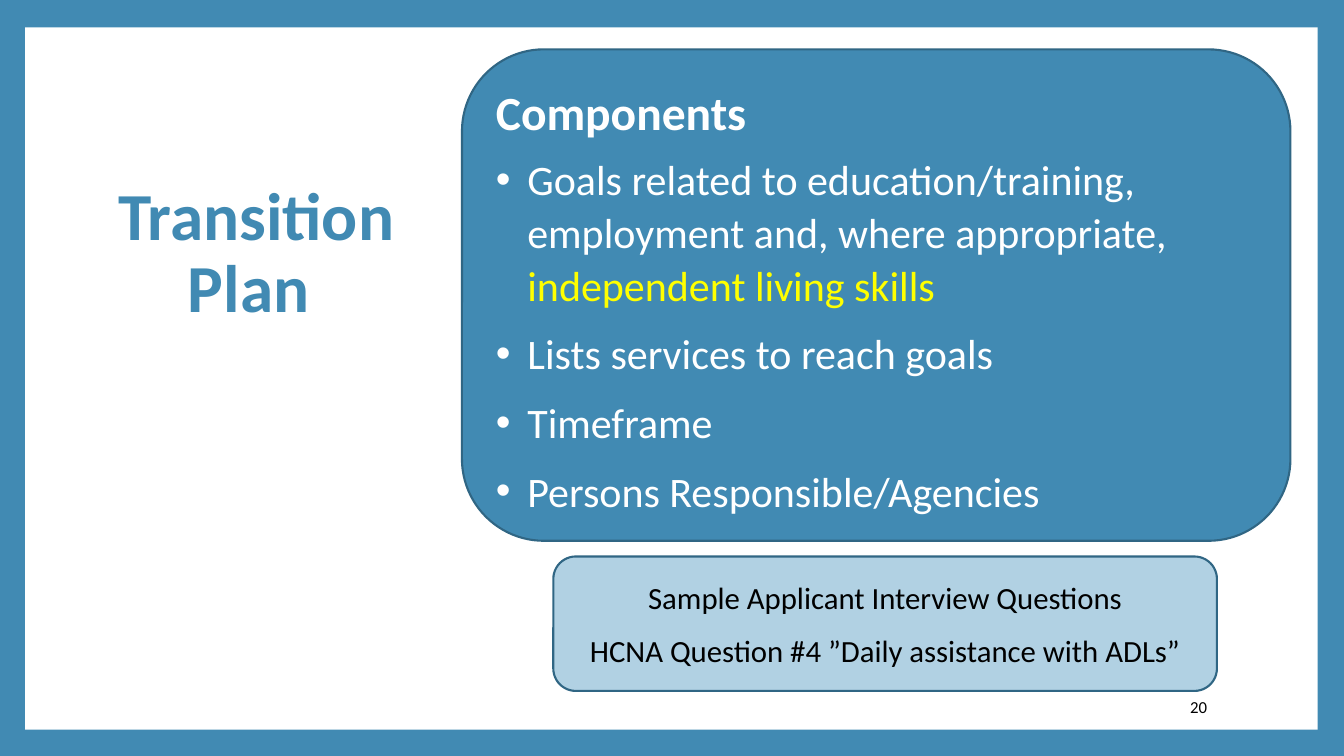
from pptx import Presentation
from pptx.dml.color import RGBColor
from pptx.enum.shapes import MSO_SHAPE
from pptx.enum.text import MSO_ANCHOR, PP_ALIGN
from pptx.oxml.ns import qn
from pptx.util import Pt
from lxml import etree

RECTANGLE = MSO_SHAPE.RECTANGLE
ROUNDED = MSO_SHAPE.ROUNDED_RECTANGLE
MIDDLE = MSO_ANCHOR.MIDDLE
LEFT, CENTER, RIGHT = PP_ALIGN.LEFT, PP_ALIGN.CENTER, PP_ALIGN.RIGHT

EMU_PER_PX = 9525
SLIDE_SIZE = (1280, 720)
FONT = "Calibri"
BLUE, DARK_BLUE, PALE_BLUE = "418AB3", "306684", "B1D1E3"
WHITE, BLACK, YELLOW = "FFFFFF", "000000", "FFFF00"
BULLET_INDENT = 30

COMPONENTS = [
    (1.05, [
        ("Goals related to education/training, employment and, where appropriate, ", WHITE),
        ("independent living skills", YELLOW),
    ]),
    (1.14, [("Lists services to reach goals", WHITE)]),
    (1.14, [("Timeframe", WHITE)]),
    (1.14, [("Persons Responsible/Agencies", WHITE)]),
]
QUESTIONS = [
    "Sample Applicant Interview Questions",
    "HCNA Question #4 ”Daily assistance with ADLs”",
]


def px(length):
    return length * EMU_PER_PX


def color(value):
    return RGBColor.from_string(value)


def add_box(slide, box, kind, fill, line=None):
    shape = slide.shapes.add_shape(kind, *map(px, box))
    shape.shadow.inherit = False
    shape.fill.solid()
    shape.fill.fore_color.rgb = color(fill)
    if line:
        shape.line.color.rgb = color(line)
        shape.line.width = Pt(1.5)
    else:
        shape.line.fill.background()
    return shape


def middle_frame(shape):
    frame = shape.text_frame
    frame.word_wrap = True
    frame.vertical_anchor = MIDDLE
    return frame


def next_paragraph(frame, alignment):
    first = frame.paragraphs[0]
    paragraph = frame.add_paragraph() if first.runs else first
    paragraph.alignment = alignment
    return paragraph


def add_run(paragraph, text, size, font_color, bold=False):
    run = paragraph.add_run()
    run.text = text
    run.font.name = FONT
    run.font.size = Pt(size)
    run.font.bold = bold
    run.font.color.rgb = color(font_color)


def add_bullet(paragraph):
    properties = paragraph._p.get_or_add_pPr()
    properties.set("marL", str(px(BULLET_INDENT)))
    properties.set("indent", str(-px(BULLET_INDENT)))
    etree.SubElement(properties, qn("a:buFont"), typeface="Arial")
    etree.SubElement(properties, qn("a:buChar"), char="•")


def add_frame(slide, box):
    slide.background.fill.solid()
    slide.background.fill.fore_color.rgb = color(BLUE)
    add_box(slide, box, RECTANGLE, WHITE)


def add_title(slide, box):
    frame = middle_frame(slide.shapes.add_textbox(*map(px, box)))
    paragraph = next_paragraph(frame, CENTER)
    paragraph.line_spacing = 0.9
    add_run(paragraph, "Transition Plan ", 48, BLUE, bold=True)


def add_page_number(slide, box):
    frame = middle_frame(slide.shapes.add_textbox(*map(px, box)))
    add_run(next_paragraph(frame, RIGHT), "20", 12, BLACK)


def add_components(slide, box):
    frame = middle_frame(add_box(slide, box, ROUNDED, BLUE, DARK_BLUE))
    heading = next_paragraph(frame, LEFT)
    heading.line_spacing = 1.14
    heading.space_after = Pt(8)
    add_run(heading, "Components", 34, WHITE, bold=True)
    for line_spacing, runs in COMPONENTS:
        paragraph = next_paragraph(frame, LEFT)
        paragraph.line_spacing = line_spacing
        paragraph.space_after = Pt(8)
        add_bullet(paragraph)
        for text, font_color in runs:
            add_run(paragraph, text, 30, font_color)


def add_questions(slide, box):
    frame = middle_frame(add_box(slide, box, ROUNDED, PALE_BLUE, DARK_BLUE))
    for index, question in enumerate(QUESTIONS):
        paragraph = next_paragraph(frame, CENTER)
        paragraph.space_before = Pt(12 if index else 0)
        add_run(paragraph, question, 22, BLACK)


def main():
    presentation = Presentation()
    presentation.slide_width, presentation.slide_height = map(px, SLIDE_SIZE)
    slide = presentation.slides.add_slide(presentation.slide_layouts[6])
    add_frame(slide, (24, 26, 1231, 669))
    add_title(slide, (49, 144, 390, 197))
    add_page_number(slide, (979, 654, 180, 38))
    add_components(slide, (440, 47, 789, 468))
    add_questions(slide, (527, 530, 632, 128))
    presentation.save("out.pptx")


if __name__ == "__main__":
    main()
